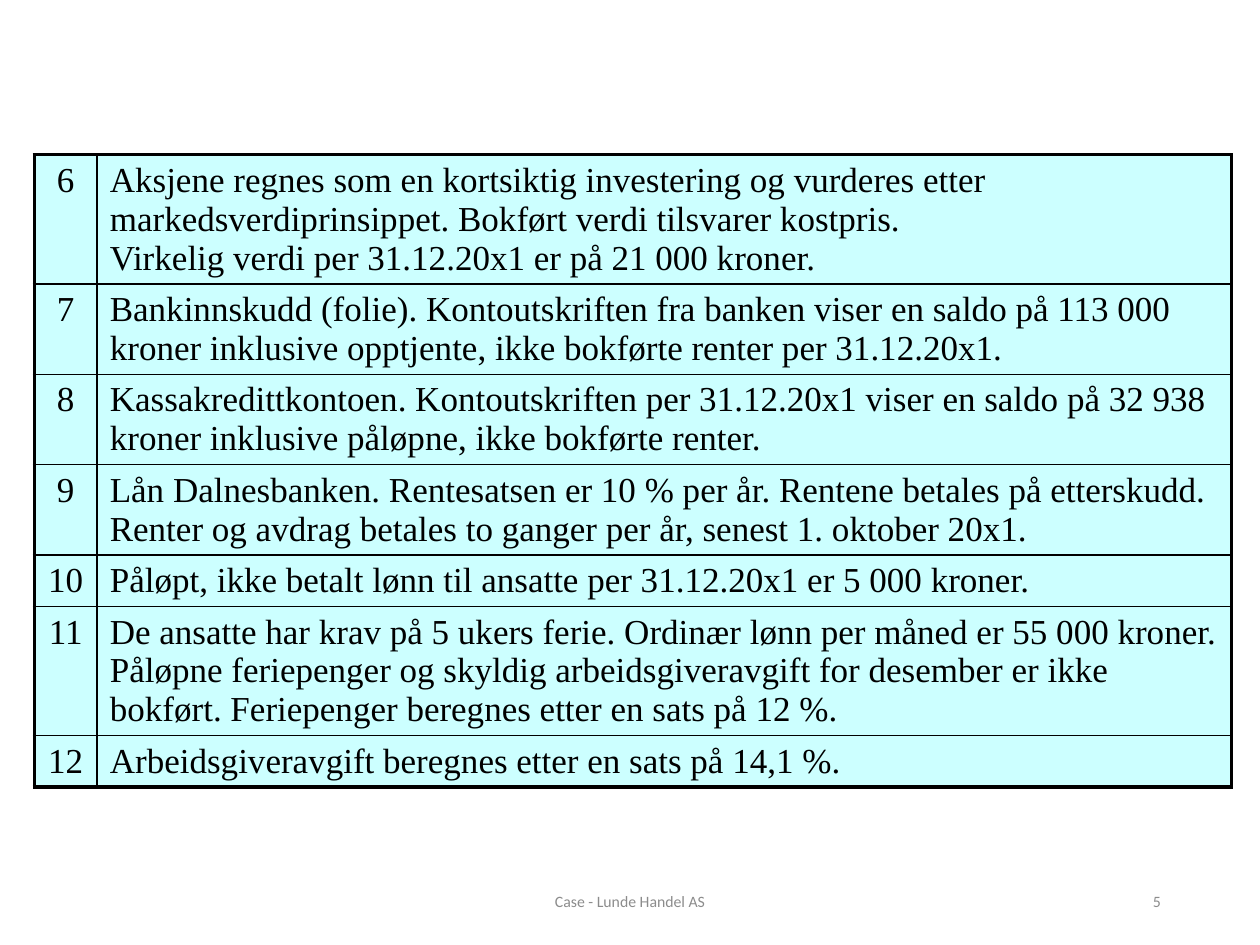
from lxml import etree
from pptx import Presentation
from pptx.dml.color import RGBColor
from pptx.enum import text
from pptx.oxml import ns
from pptx.util import Cm, Pt

INK, GREY, AQUA = "000000", "8C8C8C", "CCFFFF"
ALIGN = text.PP_ALIGN
THIN, THICK = 1, 2.25

NOTES = [
    (6, 3, "Aksjene regnes som en kortsiktig investering og vurderes etter "
           "markedsverdiprinsippet. Bokført verdi tilsvarer kostpris. \n"
           "Virkelig verdi per 31.12.20x1 er på 21 000 kroner."),
    (7, 2, "Bankinnskudd (folie). Kontoutskriften fra banken viser en saldo på 113 000 "
           "kroner inklusive opptjente, ikke bokførte renter per 31.12.20x1."),
    (8, 2, "Kassakredittkontoen. Kontoutskriften per 31.12.20x1 viser en saldo på 32 938 "
           "kroner inklusive påløpne, ikke bokførte renter."),
    (9, 2, "Lån Dalnesbanken. Rentesatsen er 10 % per år. Rentene betales på etterskudd. "
           "Renter og avdrag betales to ganger per år, senest 1. oktober 20x1."),
    (10, 1, "Påløpt, ikke betalt lønn til ansatte per 31.12.20x1 er 5 000 kroner."),
    (11, 3, "De ansatte har krav på 5 ukers ferie. Ordinær lønn per måned er 55 000 kroner. "
            "Påløpne feriepenger og skyldig arbeidsgiveravgift for desember er ikke "
            "bokført. Feriepenger beregnes etter en sats på 12 %."),
    (12, 1, "Arbeidsgiveravgift beregnes etter en sats på 14,1 %."),
]


def tint(code):
    return RGBColor.from_string(code)


def write(frame, words, size, face, color, align):
    para = frame.paragraphs[0]
    para.text = words
    para.alignment = align
    font = para.font
    font.size, font.name = Pt(size), face
    font.color.rgb = tint(color)


def label(slide, left, width, words, align):
    frame = slide.shapes.add_textbox(Cm(left), Cm(17.65), Cm(width), Cm(1.02)).text_frame
    frame.word_wrap = True
    frame.vertical_anchor = text.MSO_ANCHOR.MIDDLE
    write(frame, words, 9, "Calibri", GREY, align)


def edge(cell, side, width):
    props = cell._tc.get_or_add_tcPr()
    line = etree.SubElement(props, ns.qn("a:ln" + side), w=str(Pt(width)))
    fill = etree.SubElement(line, ns.qn("a:solidFill"))
    etree.SubElement(fill, ns.qn("a:srgbClr"), val=INK)


def box(cell, words, align, outer):
    write(cell.text_frame, words, 20, "Times New Roman", INK, align)
    for side in "LRTB":
        edge(cell, side, THICK if side in outer else THIN)
    cell.fill.solid()
    cell.fill.fore_color.rgb = tint(AQUA)


def grid(slide):
    high = [0.25 + 0.78 * lines for _, lines, _ in NOTES]
    frame = slide.shapes.add_table(len(NOTES), 2, Cm(0.69), Cm(3.12), Cm(24.13), Cm(sum(high)))
    table = frame.table
    table.first_row = table.horz_banding = False
    for col, width in zip(table.columns, (1.27, 22.86)):
        col.width = Cm(width)
    last = len(NOTES) - 1
    for i, (num, _, words) in enumerate(NOTES):
        table.rows[i].height = Cm(high[i])
        ends = ("T" if i == 0 else "") + ("B" if i == last else "")
        box(table.cell(i, 0), str(num), ALIGN.CENTER, "L" + ends)
        box(table.cell(i, 1), words, ALIGN.LEFT, "R" + ends)


def main():
    deck = Presentation()
    deck.slide_width, deck.slide_height = Cm(25.4), Cm(19.05)
    slide = deck.slides.add_slide(deck.slide_layouts[6])
    grid(slide)
    label(slide, 8.41, 8.58, "Case - Lunde Handel AS", ALIGN.CENTER)
    label(slide, 17.93, 5.72, "5", ALIGN.RIGHT)
    deck.save("out.pptx")


if __name__ == "__main__":
    main()
